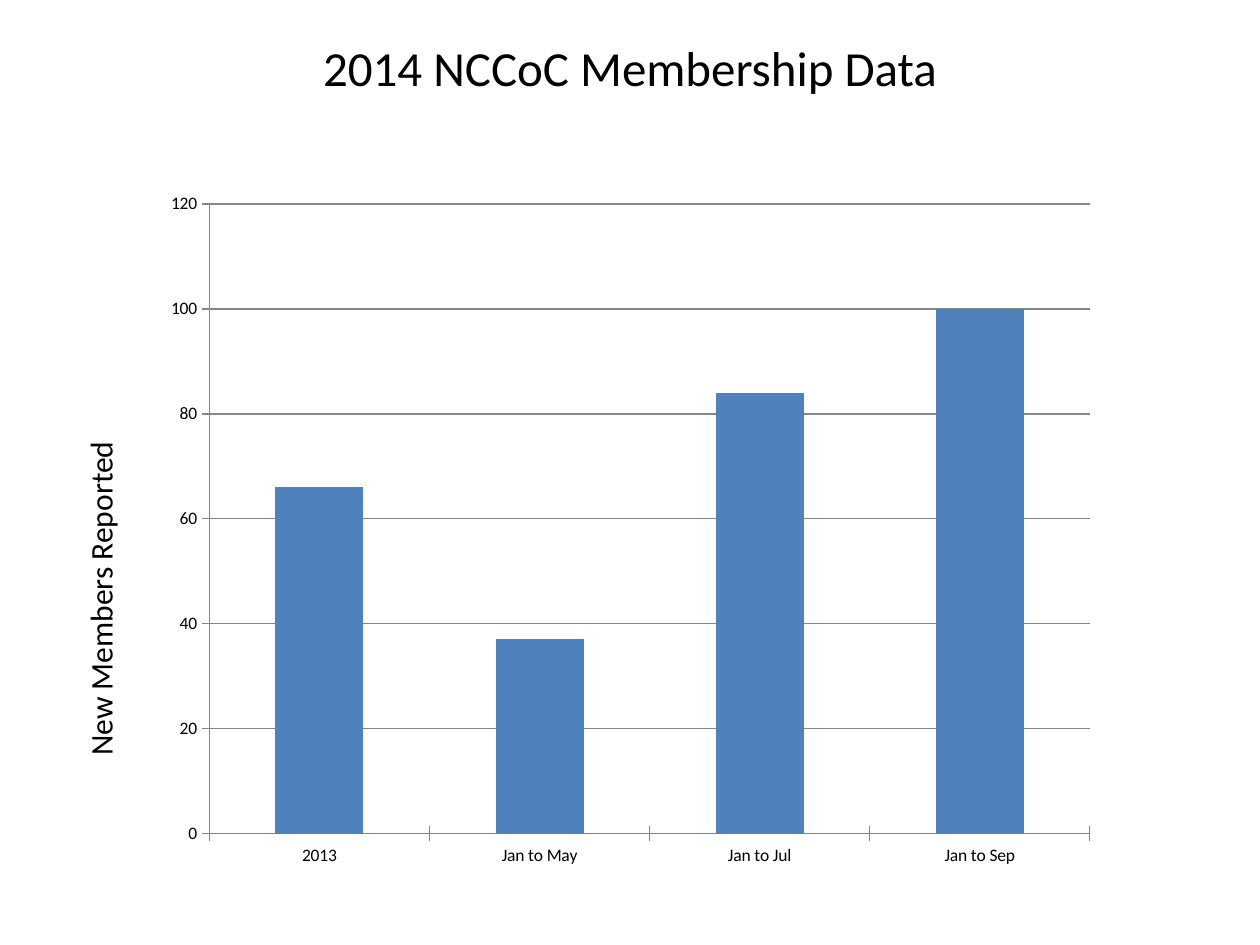
from lxml import etree
from pptx import Presentation
from pptx.chart.data import CategoryChartData
from pptx.dml.color import RGBColor
from pptx.enum.chart import XL_CHART_TYPE as ChartType, XL_TICK_MARK as TickMark
from pptx.enum.text import MSO_AUTO_SIZE as AutoSize, PP_ALIGN as Align
from pptx.oxml import parse_xml
from pptx.oxml.ns import nsdecls, qn
from pptx.util import Pt

BLACK = RGBColor(0x00, 0x00, 0x00)
BLUE = RGBColor(0x4F, 0x81, 0xBD)
GRAY = RGBColor(0x86, 0x86, 0x86)
FONT = "Calibri"

presentation = Presentation()
presentation.slide_width, presentation.slide_height = Pt(720), Pt(540)
slide = presentation.slides.add_slide(presentation.slide_layouts[6])


def style_font(font, size):
    font.name = FONT
    font.size = Pt(size)
    font.color.rgb = BLACK


# Title and rotated axis caption
labels = [
    ("2014 NCCoC Membership Data", 28, 0, (72, 18, 576, 41)),
    ("New Members Reported", 18, 270, (-80.6, 327.6, 275.8, 28.8)),
]
for text, size, rotation, box in labels:
    shape = slide.shapes.add_textbox(*map(Pt, box))
    shape.rotation = rotation
    frame = shape.text_frame
    frame.word_wrap = True
    frame.auto_size = AutoSize.SHAPE_TO_FIT_TEXT
    paragraph = frame.paragraphs[0]
    paragraph.text = text
    paragraph.alignment = Align.CENTER
    style_font(paragraph.font, size)

# Column chart
data = CategoryChartData()
data.categories = ["2013", "Jan to May", "Jan to Jul", "Jan to Sep"]
data.add_series("Series 1", (66, 37, 84, 100))
chart = slide.shapes.add_chart(
    ChartType.COLUMN_CLUSTERED, Pt(87.1), Pt(84.2), Pt(560.9), Pt(432), data
).chart
chart.has_legend = False
chart.has_title = False
style_font(chart.font, 10)

plot = chart.plots[0]
plot.gap_width = 150
plot.vary_by_categories = False
fill = plot.series[0].format.fill
fill.solid()
fill.fore_color.rgb = BLUE

# Axes and gridlines
category_axis, value_axis = chart.category_axis, chart.value_axis
value_axis.minimum_scale, value_axis.maximum_scale = 0, 120
value_axis.major_unit = 20
value_axis.has_major_gridlines = True
for axis in (category_axis, value_axis):
    axis.major_tick_mark = TickMark.CROSS
for part in (category_axis, value_axis, value_axis.major_gridlines):
    part.format.line.color.rgb = GRAY
    part.format.line.width = Pt(0.75)

# Fixed inner plot area
plot_area = chart._chartSpace.chart.plotArea
for old_layout in plot_area.findall(qn("c:layout")):
    plot_area.remove(old_layout)
layout = parse_xml(f'<c:layout {nsdecls("c")}><c:manualLayout/></c:layout>')
settings = [
    ("layoutTarget", "inner"), ("xMode", "edge"), ("yMode", "edge"),
    ("x", "0.058"), ("y", "0.075"), ("w", "0.897"), ("h", "0.833"),
]
for name, value in settings:
    etree.SubElement(layout[0], qn(f"c:{name}")).set("val", value)
plot_area.insert(0, layout)

presentation.save("out.pptx")
